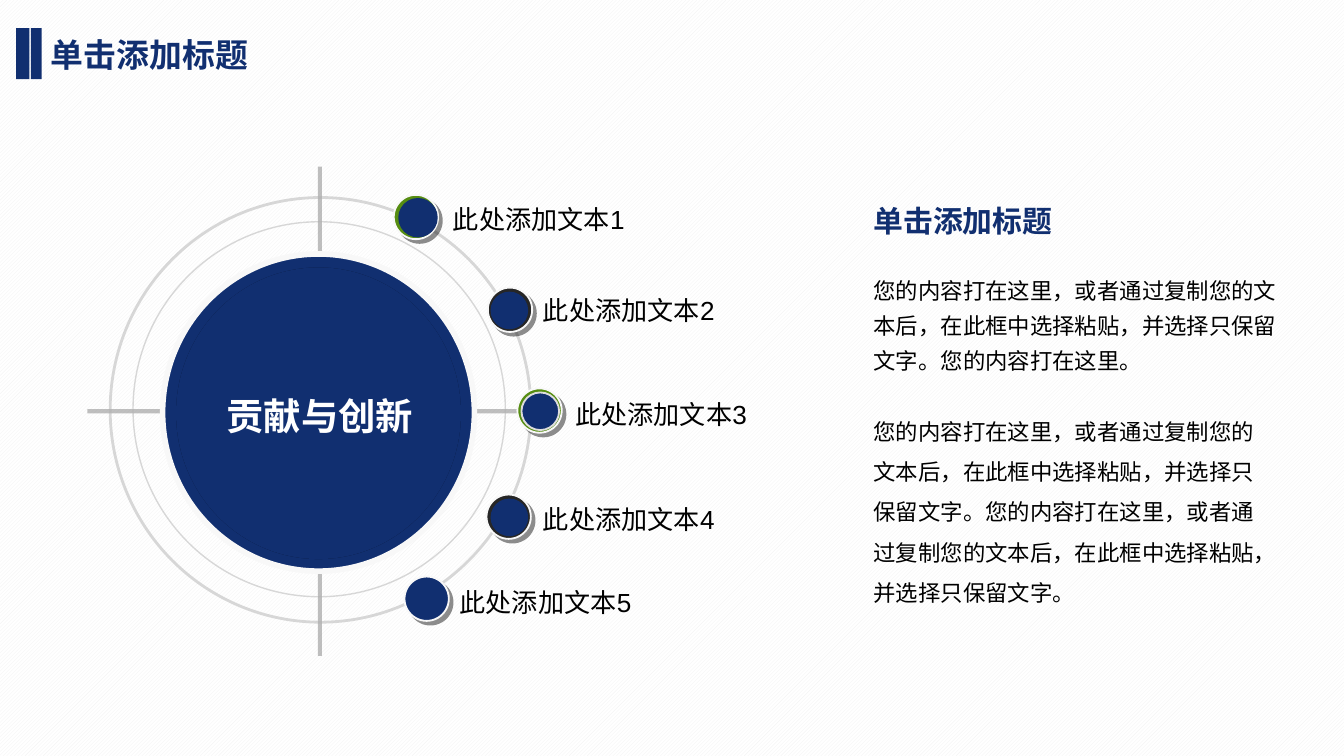
from lxml import etree
from pptx import Presentation
from pptx.dml.color import RGBColor
from pptx.enum.dml import MSO_PATTERN
from pptx.enum.shapes import MSO_CONNECTOR, MSO_SHAPE
from pptx.enum.text import MSO_ANCHOR, MSO_AUTO_SIZE, PP_ALIGN
from pptx.oxml.ns import qn
from pptx.util import Inches, Pt

OVAL, RECT = MSO_SHAPE.OVAL, MSO_SHAPE.RECTANGLE
STRAIGHT = MSO_CONNECTOR.STRAIGHT
HATCH = MSO_PATTERN.LIGHT_UPWARD_DIAGONAL
MIDDLE, TOP = MSO_ANCHOR.MIDDLE, MSO_ANCHOR.TOP
CENTER = PP_ALIGN.CENTER
GROW = MSO_AUTO_SIZE.SHAPE_TO_FIT_TEXT

NAVY = RGBColor(0x11, 0x2F, 0x70)
GREEN = RGBColor(0x56, 0x8D, 0x11)
DARK = RGBColor(0x26, 0x26, 0x26)
GRAY = RGBColor(0x80, 0x80, 0x80)
SILVER = RGBColor(0xB2, 0xB2, 0xB2)
LIGHT = RGBColor(0xDD, 0xDD, 0xDD)
PALE = RGBColor(0xF8, 0xF8, 0xF8)
MIST = RGBColor(0xF2, 0xF2, 0xF2)
WHITE = RGBColor(0xFF, 0xFF, 0xFF)
BLACK = RGBColor(0, 0, 0)
SHADE = RGBColor(0x1C, 0x1C, 0x1C)
ARIAL, NOTO = "Arial", "Noto Sans CJK SC"

HEAD = "单击添加标题"
PASTE = "您的内容打在这里，或者通过复制您的文本后，在此框中选择粘贴，并选择只保留文字。"
SHORT = PASTE + "您的内容打在这里。"
LONG = PASTE * 2

DOTS = [
    (2.93, 1.45, 2.97, 1.48, GREEN, NAVY, 3.29, 1.47),
    (3.63, 2.14, 3.65, 2.17, DARK, None, 3.96, 2.15),
    (3.85, 2.89, 3.88, 2.92, GREEN, LIGHT, 4.2, 2.92),
    (3.62, 3.68, 3.65, 3.71, DARK, None, 3.96, 3.7),
    (3.01, 4.29, 3.04, 4.32, NAVY, None, 3.34, 4.32),
]


def fade(line):
    color = line._ln.find(".//" + qn("a:srgbClr"))
    etree.SubElement(color, qn("a:alpha"), val="50000")


def style(line, color, width):
    line.color.rgb = color
    line.width = Pt(width)


def shade(shape, color, dist, angle):
    effects = shape._element.spPr.find(qn("a:effectLst"))
    outer = etree.SubElement(effects, qn("a:outerShdw"), dist=str(Pt(dist)),
                             dir=str(angle * 60000), algn="ctr", rotWithShape="0")
    tint = etree.SubElement(outer, qn("a:srgbClr"), val=str(color))
    etree.SubElement(tint, qn("a:alpha"), val="50000")


def add_shape(slide, kind, box, fill=None, edge=None, width=1):
    shape = slide.shapes.add_shape(kind, *map(Inches, box))
    shape.shadow.inherit = False
    if fill is None:
        shape.fill.background()
    else:
        shape.fill.solid()
        shape.fill.fore_color.rgb = fill
    if edge is None:
        shape.line.fill.background()
    else:
        style(shape.line, edge, width)
    return shape


def write(frame, text, size, font, color, bold=False):
    para = frame.paragraphs[0]
    para.text = text
    para.font.size = Pt(size)
    para.font.name = font
    para.font.color.rgb = color
    para.font.bold = bold
    return para


def add_text(slide, box, text, size, font=NOTO, color=BLACK, bold=False,
             anchor=TOP, inset=(0.08, 0.04), space=None):
    frame = slide.shapes.add_textbox(*map(Inches, box)).text_frame
    frame.word_wrap = True
    frame.auto_size = GROW
    frame.vertical_anchor = anchor
    frame.margin_left = frame.margin_right = Inches(inset[0])
    frame.margin_top = frame.margin_bottom = Inches(inset[1])
    para = write(frame, text, size, font, color, bold)
    if space:
        para.line_spacing = space


def add_line(slide, *ends):
    line = slide.shapes.add_connector(STRAIGHT, *map(Inches, ends))
    style(line.line, GRAY, 2.25)
    fade(line.line)
    etree.SubElement(line._element.spPr, qn("a:effectLst"))


def add_ring(slide, box, width):
    ring = add_shape(slide, OVAL, box, edge=SILVER, width=width)
    fade(ring.line)


def add_hub(slide):
    add_line(slide, 0.65, 3.06, 4.11, 3.06)
    add_line(slide, 2.38, 1.24, 2.38, 4.88)
    add_ring(slide, (0.99, 1.65, 2.77, 2.79), 0.75)
    add_ring(slide, (0.82, 1.47, 3.13, 3.16), 1.5)
    add_shape(slide, OVAL, (1.21, 1.89, 2.32, 2.36), NAVY, PALE, 3)
    disc = add_shape(slide, OVAL, (1.31, 1.99, 2.12, 2.17), NAVY)
    shade(disc, BLACK, 0, 0)
    core = add_shape(slide, OVAL, (1.7, 2.4, 1.36, 1.39), NAVY)
    frame = core.text_frame
    frame.word_wrap = False
    frame.vertical_anchor = MIDDLE
    para = write(frame, "贡献与创新", 20, ARIAL, WHITE, True)
    para.alignment = CENTER


def add_dot(slide, left, top, x, y, rim, edge):
    base = add_shape(slide, OVAL, (left, top, 0.33, 0.33), rim, PALE)
    shade(base, SHADE, 2.8, 45)
    add_shape(slide, OVAL, (x, y, 0.28, 0.28), NAVY, edge)


def main():
    deck = Presentation()
    deck.slide_width = Inches(10)
    deck.slide_height = Inches(10 * 9 / 16)
    slide = deck.slides.add_slide(deck.slide_layouts[6])
    back = slide.background.fill
    back.patterned()
    back.pattern = HATCH
    back.fore_color.rgb = MIST
    back.back_color.rgb = WHITE

    add_text(slide, (0.28, 0.21, 2.42, 0.4), HEAD, 17.6, color=NAVY, bold=True,
             inset=(0.1, 0.05))
    for left, width in ((0.12, 0.1), (0.23, 0.08)):
        add_shape(slide, RECT, (left, 0.21, width, 0.38), NAVY)

    add_hub(slide)
    for num, (*dot, x, y) in enumerate(DOTS, 1):
        add_dot(slide, *dot)
        add_text(slide, (x, y, 2.03, 0.32), f"此处添加文本{num}", 14, ARIAL,
                 anchor=MIDDLE)

    add_text(slide, (6.42, 1.47, 1.57, 0.35), HEAD, 16, color=NAVY, bold=True)
    add_text(slide, (6.42, 1.96, 3.31, 1.13), SHORT, 12, space=1.3)
    add_text(slide, (6.42, 2.97, 3.15, 1.9), LONG, 12, space=1.5)
    deck.save("out.pptx")


if __name__ == "__main__":
    main()
